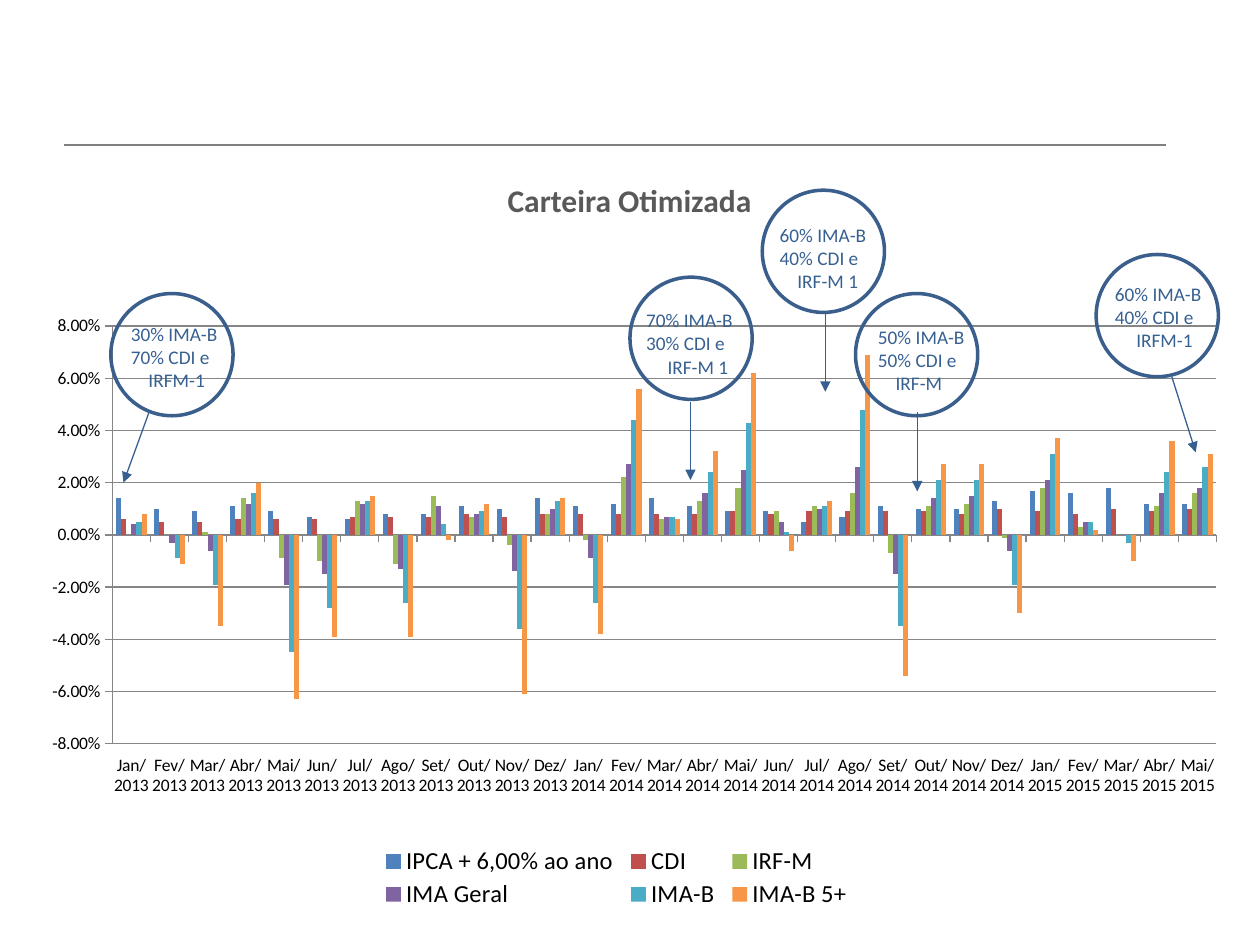
from dataclasses import dataclass

from lxml.etree import SubElement
from pptx import Presentation
from pptx.chart.data import CategoryChartData
from pptx.dml.color import RGBColor
from pptx.enum.chart import XL_CHART_TYPE, XL_LEGEND_POSITION, XL_TICK_LABEL_POSITION, XL_TICK_MARK
from pptx.enum.shapes import MSO_CONNECTOR, MSO_SHAPE
from pptx.enum.text import MSO_AUTO_SIZE
from pptx.oxml import parse_xml
from pptx.oxml.ns import nsdecls, qn
from pptx.util import Inches, Pt

FONT = "Calibri"
BLACK = RGBColor(0x00, 0x00, 0x00)
RULE_GRAY = RGBColor(0x80, 0x80, 0x80)
AXIS_GRAY = RGBColor(0x86, 0x86, 0x86)
TITLE_GRAY = RGBColor(0x59, 0x59, 0x59)
BLUE = RGBColor(0x37, 0x60, 0x92)
CIRCLE_BLUE = RGBColor(0x3A, 0x5F, 0x8C)
CIRCLE_SIZE = 0.97
MONTHS = "Jan Fev Mar Abr Mai Jun Jul Ago Set Out Nov Dez".split()
MONTH_COUNT = 29


@dataclass
class Series:
    name: str
    color: RGBColor
    thousandths: list[int]


@dataclass
class Callout:
    circle: tuple[float, float]
    label: tuple[float, float]
    start: tuple[float, float]
    end: tuple[float, float]
    lines: list[str]
    indent: float = 0.14


SERIES = [
    Series("IPCA + 6,00% ao ano", RGBColor(0x4F, 0x81, 0xBD),
           [14, 10, 9, 11, 9, 7, 6, 8, 8, 11, 10, 14, 11, 12, 14, 11, 9, 9, 5, 7,
            11, 10, 10, 13, 17, 16, 18, 12, 12]),
    Series("CDI", RGBColor(0xC0, 0x50, 0x4D),
           [6, 5, 5, 6, 6, 6, 7, 7, 7, 8, 7, 8, 8, 8, 8, 8, 9, 8, 9, 9,
            9, 9, 8, 10, 9, 8, 10, 9, 10]),
    Series("IRF-M", RGBColor(0x9B, 0xBB, 0x59),
           [0, 0, 1, 14, -9, -10, 13, -11, 15, 7, -4, 8, -2, 22, 6, 13, 18, 9, 11, 16,
            -7, 11, 12, -1, 18, 3, 0, 11, 16]),
    Series("IMA Geral", RGBColor(0x80, 0x64, 0xA2),
           [4, -3, -6, 12, -19, -15, 12, -13, 11, 8, -14, 10, -9, 27, 7, 16, 25, 5, 10, 26,
            -15, 14, 15, -6, 21, 5, 0, 16, 18]),
    Series("IMA-B", RGBColor(0x4B, 0xAC, 0xC6),
           [5, -9, -19, 16, -45, -28, 13, -26, 4, 9, -36, 13, -26, 44, 7, 24, 43, 1, 11, 48,
            -35, 21, 21, -19, 31, 5, -3, 24, 26]),
    Series("IMA-B 5+", RGBColor(0xF7, 0x96, 0x46),
           [8, -11, -35, 20, -63, -39, 15, -39, -2, 12, -61, 14, -38, 56, 6, 32, 62, -6, 13, 69,
            -54, 27, 27, -30, 37, 2, -10, 36, 31]),
]

CALLOUTS = [
    Callout((0.88, 2.33), (0.94, 2.51), (1.18, 3.28), (0.98, 3.83),
            ["30% IMA-B", "70% CDI e", "IRFM-1"]),
    Callout((5.0, 2.2), (5.03, 2.4), (5.48, 3.19), (5.48, 3.81),
            ["70% IMA-B", "30% CDI e", "IRF-M 1"], 0.17),
    Callout((6.05, 1.51), (6.09, 1.72), (6.55, 2.49), (6.55, 3.11),
            ["60% IMA-B", "40% CDI e", "IRF-M 1"]),
    Callout((6.79, 2.33), (6.87, 2.53), (7.28, 3.27), (7.28, 3.9),
            ["50% IMA-B", "50% CDI e", "IRF-M"]),
    Callout((8.7, 2.02), (8.75, 2.19), (9.3, 2.99), (9.49, 3.59),
            ["60% IMA-B", "40% CDI e", "IRFM-1"], 0.17),
]


def add_text(shapes, lines: list[str], left: float, top: float, width: float, height: float, *,
             size: float, color: RGBColor, bold: bool = False, last_indent: float = 0) -> None:
    """Add a non-wrapping text box whose last line may be indented."""
    box = shapes.add_textbox(Inches(left), Inches(top), Inches(width), Inches(height))
    frame = box.text_frame
    frame.word_wrap = False
    frame.auto_size = MSO_AUTO_SIZE.SHAPE_TO_FIT_TEXT
    frame.text = "\n".join(lines)
    for paragraph in frame.paragraphs:
        font = paragraph.runs[0].font
        font.name, font.size, font.bold = FONT, Pt(size), bold
        font.color.rgb = color
    if last_indent:
        frame.paragraphs[-1]._p.get_or_add_pPr().set("marL", str(Inches(last_indent)))


def add_line(shapes, start: tuple[float, float], end: tuple[float, float],
             color: RGBColor, arrow: bool = False) -> None:
    """Add a thin straight line, optionally with an arrowhead at its end."""
    connector = shapes.add_connector(MSO_CONNECTOR.STRAIGHT, *map(Inches, start + end))
    connector.line.color.rgb = color
    connector.line.width = Pt(0.75)
    if arrow:
        SubElement(connector.line._get_or_add_ln(), qn("a:tailEnd"), type="triangle")
    SubElement(connector._element.spPr, qn("a:effectLst"))


def add_callout(slide, callout: Callout) -> None:
    """Add a circle with its label and arrow as one group."""
    shapes = slide.shapes.add_group_shape().shapes
    add_line(shapes, callout.start, callout.end, BLUE, arrow=True)
    circle = shapes.add_shape(MSO_SHAPE.OVAL, *map(Inches, callout.circle),
                              Inches(CIRCLE_SIZE), Inches(CIRCLE_SIZE))
    circle.shadow.inherit = False
    circle.fill.background()
    circle.line.color.rgb = CIRCLE_BLUE
    circle.line.width = Pt(2)
    add_text(shapes, callout.lines, *callout.label, 0.9, 0.66, size=11, color=BLUE,
             last_indent=callout.indent)


def make_layout(left: float, top: float, width: float, height: float, inner: bool = False):
    """Return a manual chart layout in fractions of the chart."""
    target = '<c:layoutTarget val="inner"/>' if inner else ""
    return parse_xml(
        f'<c:layout {nsdecls("c")}><c:manualLayout>{target}'
        '<c:xMode val="edge"/><c:yMode val="edge"/>'
        f'<c:x val="{left}"/><c:y val="{top}"/><c:w val="{width}"/><c:h val="{height}"/>'
        '</c:manualLayout></c:layout>')


def add_returns_chart(slide) -> None:
    """Add the clustered columns of monthly returns."""
    data = CategoryChartData(number_format="0.00%")
    data.categories = [f"{MONTHS[i % 12]}/{2013 + i // 12}" for i in range(MONTH_COUNT)]
    for series in SERIES:
        data.add_series(series.name, [value / 1000 for value in series.thousandths])
    chart = slide.shapes.add_chart(XL_CHART_TYPE.COLUMN_CLUSTERED, Inches(0.13), Inches(2.34),
                                   Inches(9.53), Inches(4.95), data).chart
    chart.has_title = False
    chart.font.name, chart.font.size = FONT, Pt(10)
    chart.font.color.rgb = BLACK

    plot = chart.plots[0]
    plot.gap_width, plot.overlap, plot.vary_by_categories = 150, 0, False
    for drawn, series in zip(plot.series, SERIES):
        drawn.invert_if_negative = False
        drawn.format.fill.solid()
        drawn.format.fill.fore_color.rgb = series.color

    category_axis, value_axis = chart.category_axis, chart.value_axis
    category_axis.tick_label_position = XL_TICK_LABEL_POSITION.LOW
    value_axis.minimum_scale, value_axis.maximum_scale = -0.08, 0.08
    value_axis.major_unit = 0.02
    value_axis.has_major_gridlines = True
    value_axis.tick_labels.number_format = "0.00%"
    value_axis.tick_labels.number_format_is_linked = False
    for axis in (category_axis, value_axis):
        axis.major_tick_mark = XL_TICK_MARK.OUTSIDE
    for item in (category_axis, value_axis, value_axis.major_gridlines):
        item.format.line.color.rgb = AXIS_GRAY
        item.format.line.width = Pt(0.75)

    chart.has_legend = True
    legend = chart.legend
    legend.position = XL_LEGEND_POSITION.BOTTOM
    legend.include_in_layout = False
    legend.font.name, legend.font.size = FONT, Pt(14)
    legend.font.color.rgb = BLACK
    legend._element.find(qn("c:legendPos")).addnext(make_layout(0.3, 0.88, 0.4, 0.11))

    plot_area = chart._chartSpace.chart.plotArea
    for layout in plot_area.findall(qn("c:layout")):
        plot_area.remove(layout)
    plot_area.insert(0, make_layout(0.08, 0.05, 0.92, 0.67, inner=True))


def main() -> None:
    """Build the slide and save it."""
    presentation = Presentation()
    presentation.slide_width, presentation.slide_height = Inches(10), Inches(7.5)
    slide = presentation.slides.add_slide(presentation.slide_layouts[6])
    add_line(slide.shapes, (0.51, 1.15), (9.25, 1.15), RULE_GRAY)
    add_returns_chart(slide)
    for callout in CALLOUTS:
        add_callout(slide, callout)
    add_text(slide.shapes, ["Carteira Otimizada"], 3.93, 1.39, 2.15, 0.4,
             size=18, color=TITLE_GRAY, bold=True)
    presentation.save("out.pptx")


if __name__ == "__main__":
    main()
